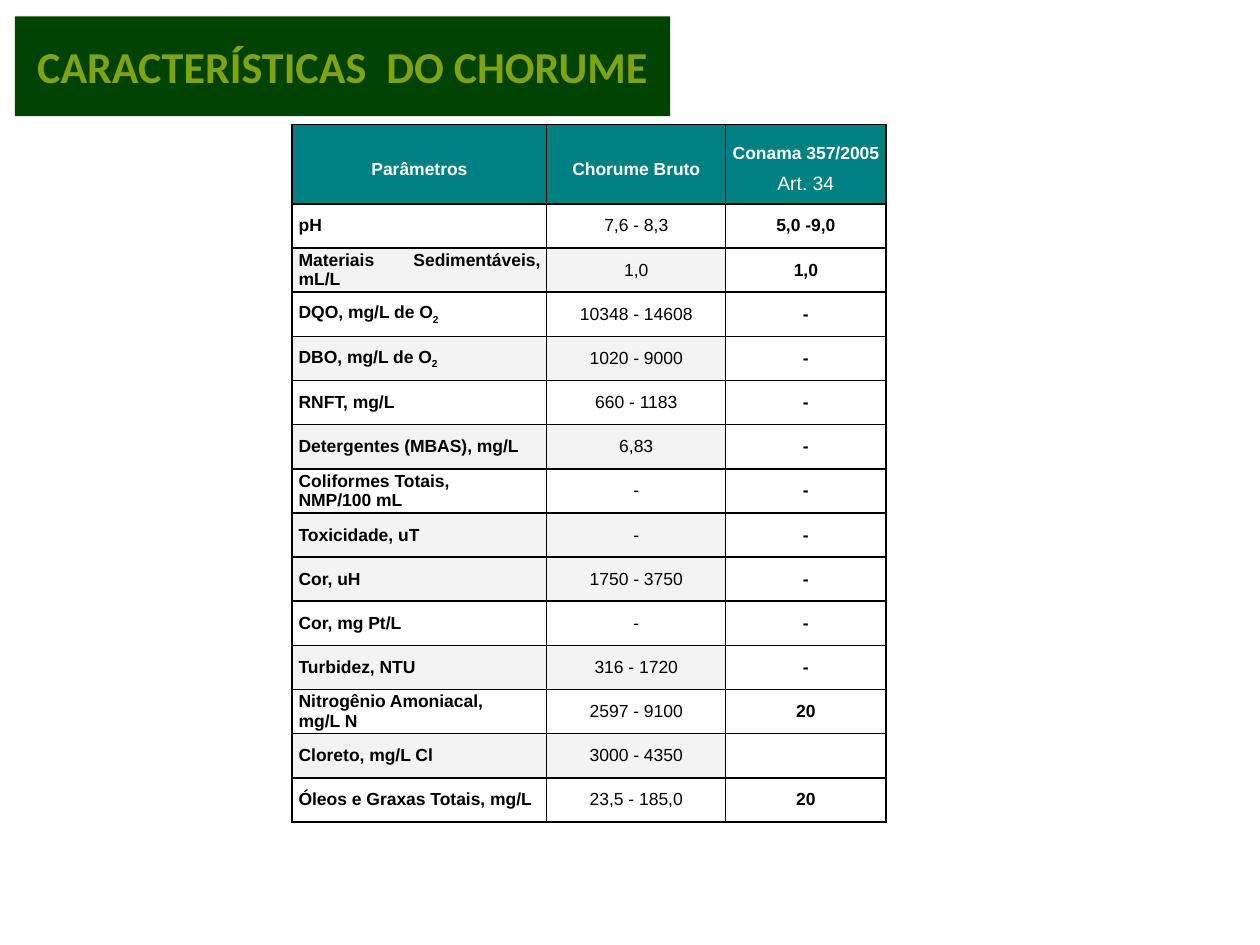
from lxml import etree
from pptx import Presentation
from pptx import util as u
from pptx.dml.color import RGBColor
from pptx.enum import text
from pptx.oxml.ns import qn

TITLE = "CARACTERÍSTICAS  DO CHORUME"
HEAD = ["Parâmetros", "Chorume Bruto", "Conama 357/2005\nArt. 34"]
ROWS = [
    ("pH", "7,6 - 8,3", "5,0 -9,0"),
    ("Materiais Sedimentáveis, mL/L", "1,0", "1,0"),
    ("DQO, mg/L de O_2", "10348 - 14608", "-"),
    ("DBO, mg/L de O_2", "1020 - 9000", "-"),
    ("RNFT, mg/L", "660 - 1183", "-"),
    ("Detergentes (MBAS), mg/L", "6,83", "-"),
    ("Coliformes Totais,\nNMP/100 mL", "-", "-"),
    ("Toxicidade, uT", "-", "-"),
    ("Cor, uH", "1750 - 3750", "-"),
    ("Cor, mg Pt/L", "-", "-"),
    ("Turbidez, NTU", "316 - 1720", "-"),
    ("Nitrogênio Amoniacal,\nmg/L N", "2597 - 9100", "20"),
    ("Cloreto, mg/L Cl", "3000 - 4350", ""),
    ("Óleos e Graxas Totais, mg/L", "23,5 - 185,0", "20"),
]
GRAY = {2, 4, 6, 8, 9, 11, 13}
COLS = [5.13, 3.61, 3.23]
TOP, STEP = 1.6, 0.89


def paint(part, tone):
    part.solid()
    part.fore_color.rgb = RGBColor.from_string(tone)


def write(para, words, size, tone, bold=True, face="Arial"):
    run = para.add_run()
    run.text = words
    font = run.font
    font.name, font.size, font.bold = face, u.Pt(size), bold
    paint(font.fill, tone)
    return run


def edge(cell):
    props = cell._tc.get_or_add_tcPr()
    for i, side in enumerate(("lnL", "lnR", "lnT", "lnB")):
        line = etree.Element(qn("a:" + side), w=str(u.Pt(1)))
        fill = etree.SubElement(line, qn("a:solidFill"))
        etree.SubElement(fill, qn("a:srgbClr"), val="000000")
        props.insert(i, line)


def fill_cell(cell, words, r, c):
    cell.vertical_anchor = text.MSO_ANCHOR.MIDDLE
    cell.margin_left = cell.margin_right = u.Cm(0.13)
    cell.margin_top = cell.margin_bottom = 0
    if r == 0:
        paint(cell.fill, "008080")
    elif r in GRAY and c < 2:
        paint(cell.fill, "F3F3F3")
    else:
        cell.fill.background()
    edge(cell)
    frame = cell.text_frame
    for i, line in enumerate(words.split("\n")):
        para = frame.add_paragraph() if i else frame.paragraphs[0]
        left = r > 0 and c == 0
        para.alignment = text.PP_ALIGN.JUSTIFY if left else text.PP_ALIGN.CENTER
        if r == 0:
            para.line_spacing = 1.5
            write(para, line, 11 if i else 10, "FFFFFF", i == 0)
        elif line:
            main, _, sub = line.partition("_")
            write(para, main, 10, "000000", c != 1)
            if sub:
                run = write(para, sub, 10, "000000")
                run.font._element.set("baseline", "-25000")


deck = Presentation()
deck.slide_width, deck.slide_height = u.Cm(25.4), u.Cm(19.05)
slide = deck.slides.add_slide(deck.slide_layouts[5])

title = slide.shapes.title
title.left, title.top = u.Cm(0.3), u.Cm(0.33)
title.width, title.height = u.Cm(13.21), u.Cm(2.01)
paint(title.fill, "004202")
frame = title.text_frame
frame.auto_size = text.MSO_AUTO_SIZE.NONE
frame.vertical_anchor = text.MSO_ANCHOR.MIDDLE
frame.paragraphs[0].alignment = text.PP_ALIGN.CENTER
write(frame.paragraphs[0], TITLE, 25.2, "80A311", face="Calibri")

data = [HEAD, *ROWS]
grid = slide.shapes.add_table(
    len(data), len(COLS), u.Cm(5.89), u.Cm(2.51),
    u.Cm(sum(COLS)), u.Cm(TOP + STEP * len(ROWS))).table
for col, wide in zip(grid.columns, COLS):
    col.width = u.Cm(wide)
for r, row in enumerate(data):
    grid.rows[r].height = u.Cm(STEP if r else TOP)
    for c, words in enumerate(row):
        fill_cell(grid.cell(r, c), words, r, c)

deck.save("out.pptx")
